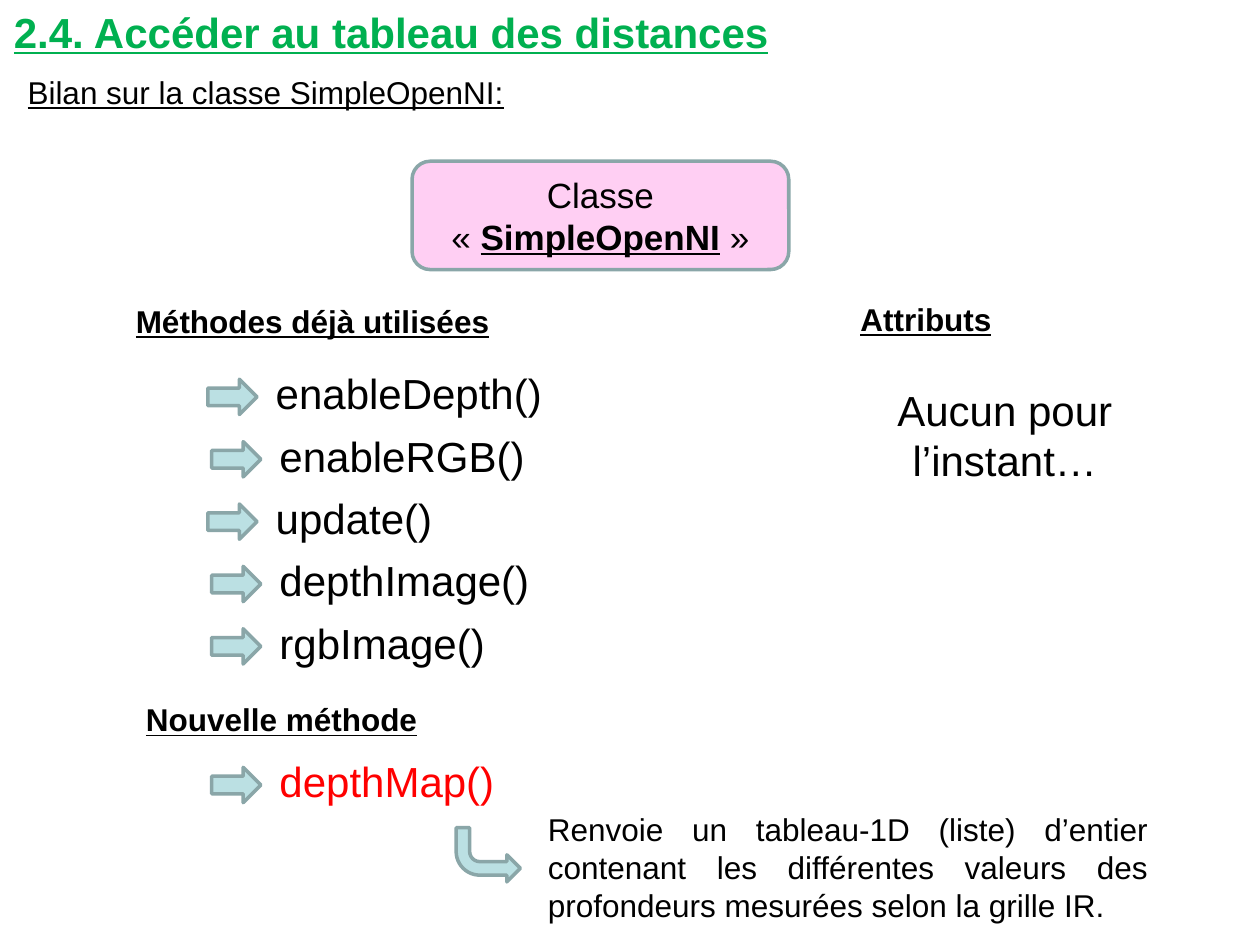
from pptx import Presentation, util as u
from pptx.dml.color import RGBColor
from pptx.enum import shapes, text
from pptx.oxml.ns import qn
from lxml import etree

BLACK = RGBColor(0, 0, 0)
RED = RGBColor(255, 0, 0)
GREEN = RGBColor(0x00, 0xB0, 0x50)
PINK = RGBColor(0xFF, 0x33, 0xCC)
PALE_BLUE = RGBColor(0xBB, 0xE0, 0xE3)
GREY_BLUE = RGBColor(0x8A, 0xA6, 0xA8)

LEFT, CENTER, JUSTIFY = (text.PP_ALIGN.LEFT, text.PP_ALIGN.CENTER,
                         text.PP_ALIGN.JUSTIFY)
PLAIN = {"size": u.Pt(18)}
LARGE = {"size": u.Pt(24)}
UNDERLINED = {**PLAIN, "underline": True}
HEADING = {**UNDERLINED, "bold": True}
CLASS_TEXT = {"size": u.Pt(20)}
CLASS_NAME = {**CLASS_TEXT, "bold": True, "underline": True}

TITLE = "2.4. Accéder au tableau des distances"
CLASS_RUNS = [("Classe «\u00a0", CLASS_TEXT), ("SimpleOpenNI", CLASS_NAME),
              ("\u00a0»", CLASS_TEXT)]
TEXTS = [
    ("Bilan sur la classe SimpleOpenNI:", (0.12, 0.53, 4.02, 0.4), UNDERLINED, LEFT, False),
    ("Attributs", (6.73, 2.33, 1.25, 0.4), HEADING, LEFT, False),
    ("Méthodes déjà utilisées", (0.98, 2.35, 3.27, 0.4), HEADING, LEFT, True),
    ("Nouvelle méthode", (1.06, 5.51, 2.38, 0.4), HEADING, LEFT, False),
    ("Aucun pour l’instant…", (6.61, 3, 2.73, 0.91), LARGE, CENTER, True),
    ("Renvoie un tableau-1D (liste) d’entier contenant les différentes valeurs "
     "des profondeurs mesurées selon la grille IR.",
     (4.25, 6.38, 4.96, 1.01), PLAIN, JUSTIFY, True),
]
USED_METHODS = [("enableDepth()", 1.65), ("enableRGB()", 1.68), ("update()", 1.65),
                ("depthImage()", 1.68), ("rgbImage()", 1.68)]
METHOD_TOP, METHOD_STEP = 2.87, 0.495
NEW_METHOD, NEW_METHOD_TOP = ("depthMap()", 1.68), 5.95


def inches(place):
    return [u.Inches(value) for value in place]


def write(frame, runs, align=LEFT, wrap=True):
    frame.word_wrap = wrap
    para = frame.paragraphs[0]
    para.alignment = align
    for words, style in runs:
        span = para.add_run()
        span.text = words
        span.font.color.rgb = style.get("color", BLACK)
        for name, value in {"name": "Arial", **style}.items():
            if name != "color":
                setattr(span.font, name, value)


def add_text(page, words, place, style, align, wrap=True):
    box = page.shapes.add_textbox(*inches(place))
    write(box.text_frame, [(words, style)], align, wrap)


def add_outlined(page, kind, place, fill):
    shape = page.shapes.add_shape(kind, *inches(place))
    shape.shadow.inherit = False
    shape.fill.solid()
    shape.fill.fore_color.rgb = fill
    shape.line.color.rgb = GREY_BLUE
    shape.line.width = u.Pt(2)
    return shape


def add_method(page, method, top, color=BLACK):
    name, left = method
    add_text(page, name, (left + 0.44, top, 2.73, 0.5), {**LARGE, "color": color}, JUSTIFY)
    add_outlined(page, shapes.MSO_SHAPE.RIGHT_ARROW, (left, top + 0.14, 0.39, 0.28), PALE_BLUE)


def main():
    deck = Presentation()
    deck.slide_width, deck.slide_height = inches((10, 7.5))
    page = deck.slides.add_slide(deck.slide_layouts[5])

    title = page.shapes.title
    title.left, title.top, title.width, title.height = inches((0.01, 0, 9.9, 0.5))
    title.text_frame.vertical_anchor = text.MSO_ANCHOR.TOP
    title.text_frame.auto_size = text.MSO_AUTO_SIZE.NONE
    write(title.text_frame, [(TITLE, {**HEADING, **LARGE, "color": GREEN})])

    class_box = add_outlined(page, shapes.MSO_SHAPE.ROUNDED_RECTANGLE,
                             (3.27, 1.28, 2.99, 0.86), PINK)
    tint = class_box.fill._xPr.find(qn("a:solidFill"))[0]
    etree.SubElement(tint, qn("a:alpha"), val="23000")
    class_box.text_frame.vertical_anchor = text.MSO_ANCHOR.MIDDLE
    write(class_box.text_frame, CLASS_RUNS, CENTER)

    for entry in TEXTS:
        add_text(page, *entry)
    for row, method in enumerate(USED_METHODS):
        add_method(page, method, METHOD_TOP + row * METHOD_STEP)
    add_method(page, NEW_METHOD, NEW_METHOD_TOP, RED)

    bent_arrow = add_outlined(page, shapes.MSO_SHAPE.BENT_ARROW,
                              (3.62, 6.57, 0.51, 0.43), PALE_BLUE)
    bent_arrow._element.spPr.find(qn("a:xfrm")).set("flipV", "1")

    deck.save("out.pptx")


if __name__ == "__main__":
    main()
